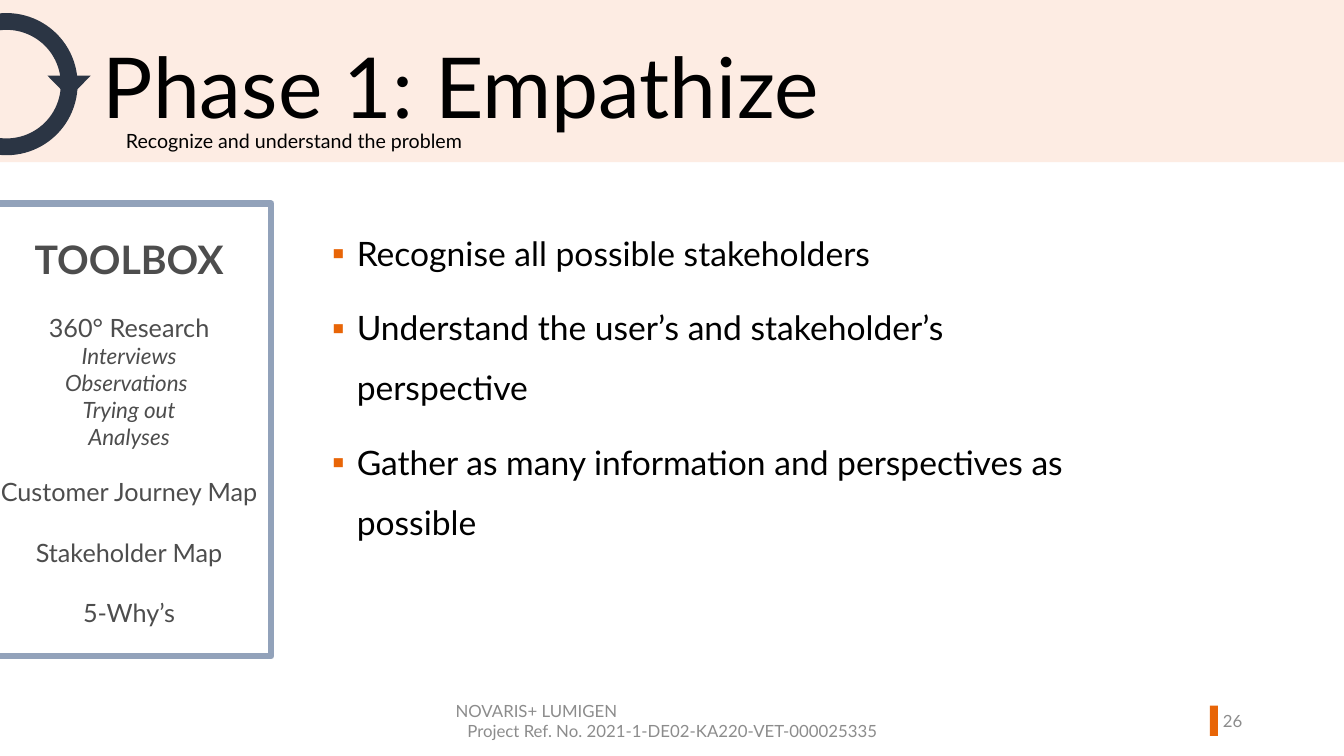
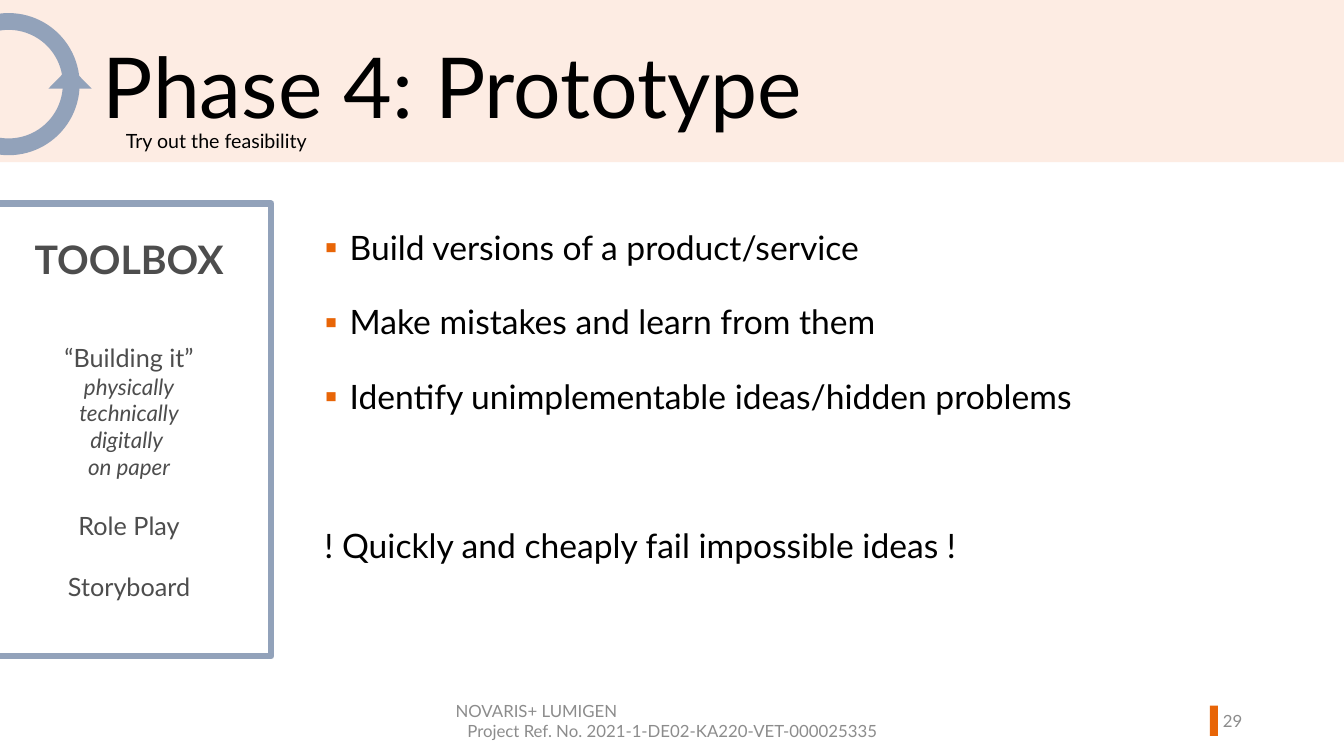
from lxml import etree
from pptx import Presentation
from pptx.dml.color import RGBColor
from pptx.enum import shapes, text
from pptx.oxml import ns
from pptx.util import Inches, Pt

FONT = "Lato"
BLACK, GRAY, DARK = "000000", "8C8C8C", "4D4D4D"
PEACH, ORANGE, STEEL, NAVY, WHITE = "FDECE3", "E86507", "92A2BA", "2B3544", "FFFFFF"
KIND = shapes.MSO_SHAPE
ALIGN = text.PP_ALIGN
TOP, MID = text.MSO_ANCHOR.TOP, text.MSO_ANCHOR.MIDDLE
hue = RGBColor.from_string


def draw(group, kind, spot, fill, line=None):
    shape = group.add_shape(kind, *map(Inches, spot))
    shape.shadow.inherit = False
    shape.fill.solid()
    shape.fill.fore_color.rgb = hue(fill)
    if line:
        shape.line.color.rgb = hue(line)
        shape.line.width = Pt(4.5)
    else:
        shape.line.fill.background()
    return shape


def say(frame, words, size, tone=BLACK, align=ALIGN.LEFT, gap=0, bold=False, slant=False):
    para = frame.add_paragraph() if frame.text else frame.paragraphs[0]
    para.alignment = align
    para.space_before = Pt(gap)
    run = para.add_run()
    run.text = words
    font = run.font
    font.name, font.size, font.bold, font.italic = FONT, Pt(size), bold, slant
    font.color.rgb = hue(tone)
    return para


pages = [
    {
        "title": "Phase 1: Empathize",
        "sub": "Recognize and understand the problem",
        "page": "26",
        "tone": NAVY,
        "ring": -0.64,
        "tip": (0.47, 0.75, 0.43, 0.22),
        "turn": 180,
        "body": (3.19, 2.01, 8.02, 3.47),
        "anchor": MID,
        "points": [
            "Recognise all possible stakeholders",
            "Understand the user’s and stakeholder’s perspective",
            "Gather as many information and perspectives as possible",
        ],
        "close": None,
        "tools": [
            ("360° Research", 18, 21.6),
            ("Interviews", 16, 0),
            ("Observations ", 16, 0),
            ("Trying out", 16, 0),
            ("Analyses", 16, 0),
            ("Customer Journey Map", 18, 19.2),
            ("Stakeholder Map", 18, 21.6),
            ("5-Why’s", 18, 21.6),
        ],
    },
    {
        "title": "Phase 4: Prototype",
        "sub": "Try out the feasibility",
        "page": "29",
        "tone": STEEL,
        "ring": -0.62,
        "tip": (0.48, 0.66, 0.43, 0.22),
        "turn": 0,
        "body": (3.12, 2, 9.3, 4.76),
        "anchor": TOP,
        "points": [
            "Build versions of a product/service",
            "Make mistakes and learn from them",
            "Identify unimplementable ideas/hidden problems",
        ],
        "close": "! Quickly and cheaply fail impossible ideas !",
        "tools": [
            ("“Building it”", 18, 43.2),
            ("physically", 16, 0),
            ("technically", 16, 0),
            ("digitally ", 16, 0),
            ("on paper", 16, 0),
            ("Role Play", 18, 21.6),
            ("Storyboard", 18, 21.6),
        ],
    },
]

deck = Presentation()
deck.slide_width, deck.slide_height = Inches(13.33), Inches(7.5)
base = deck.slide_layouts[5]
for holder in list(base.placeholders):
    if holder.placeholder_format.idx:
        holder.element.getparent().remove(holder.element)
slides = [deck.slides.add_slide(base) for _ in pages]

band = draw(slides[0].shapes, KIND.RECTANGLE, (0, 0, 13.33, 1.61), PEACH)
mark = draw(slides[0].shapes, KIND.RECTANGLE, (12, 7, 0.08, 0.3), ORANGE)
for shape in (band, mark):
    base.shapes.element.append(shape.element)

for slide, page in zip(slides, pages):
    title = slide.shapes.title
    title.left, title.top = Inches(0.92), Inches(0.41)
    title.width, title.height = Inches(9.93), Inches(0.85)
    title.text_frame.vertical_anchor = TOP
    title.text_frame.auto_size = text.MSO_AUTO_SIZE.NONE
    say(title.text_frame, page["title"], 60).line_spacing = 0.9

    icon = slide.shapes.add_group_shape().shapes
    ring = draw(icon, KIND.DONUT, (page["ring"], 0.13, 1.41, 1.41), page["tone"])
    ring.adjustments[0] = 0.118
    tip = draw(icon, KIND.ISOSCELES_TRIANGLE, page["tip"], page["tone"])
    tip.rotation = page["turn"]

    frames = []
    for spot, anchor in [
        ((1.15, 1.23, 3.88, 0.34), TOP),
        ((4.42, 6.95, 4.5, 0.4), MID),
        ((11.77, 6.95, 0.65, 0.4), MID),
        (page["body"], page["anchor"]),
    ]:
        frame = slide.shapes.add_textbox(*map(Inches, spot)).text_frame
        frame.word_wrap = True
        frame.vertical_anchor = anchor
        frames.append(frame)
    sub, foot, number, body = frames

    say(sub, page["sub"], 14)
    say(foot, "NOVARIS+ LUMIGEN", 12, GRAY)
    say(foot, "Project Ref. No. 2021-1-DE02-KA220-VET-000025335", 12, GRAY, ALIGN.CENTER)
    say(number, page["page"], 12, GRAY, ALIGN.RIGHT)

    for point in page["points"]:
        para = say(body, point, 24, gap=10)
        para.line_spacing = 1.5
        props = para._p.get_or_add_pPr()
        props.set("marL", str(Inches(0.25)))
        props.set("indent", str(Inches(-0.25)))
        color = etree.SubElement(props, ns.qn("a:buClr"))
        etree.SubElement(color, ns.qn("a:srgbClr"), val=ORANGE)
        etree.SubElement(props, ns.qn("a:buFont"), typeface=FONT)
        etree.SubElement(props, ns.qn("a:buChar"), char="▪")
    if page["close"]:
        say(body, page["close"], 24, gap=63.2).line_spacing = 1.5

    box = draw(slide.shapes, KIND.RECTANGLE, (-0.13, 2.02, 2.82, 4.49), WHITE, STEEL)
    tools = box.text_frame
    tools.word_wrap = True
    tools.vertical_anchor = TOP
    tools.margin_top = Inches(0.31)
    say(tools, "TOOLBOX", 28, DARK, ALIGN.CENTER, bold=True)
    for words, size, gap in page["tools"]:
        say(tools, words, size, DARK, ALIGN.CENTER, gap, slant=size == 16)

deck.save("out.pptx")
